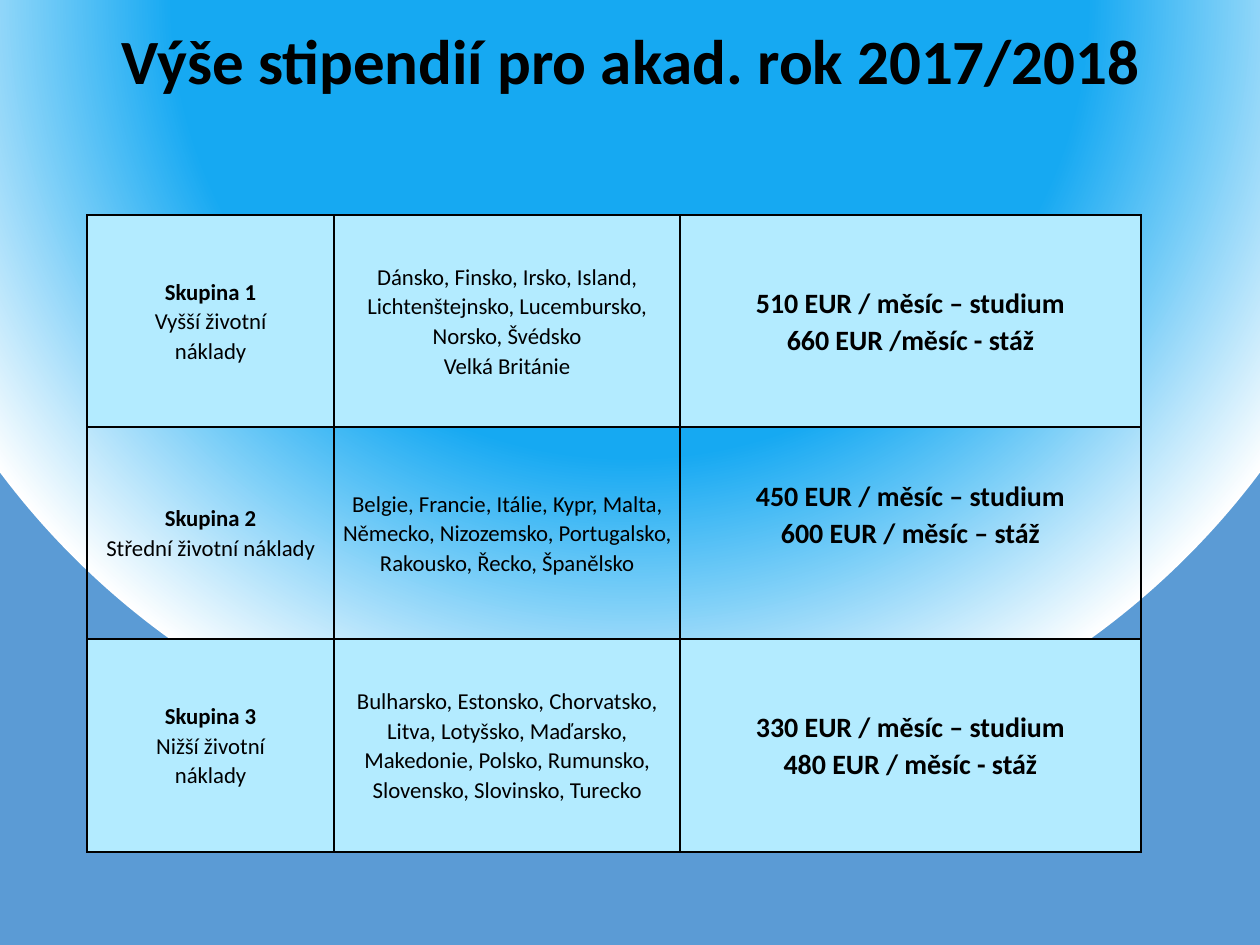
from dataclasses import dataclass

from pptx import Presentation
from pptx.dml.color import RGBColor
from pptx.enum.text import MSO_ANCHOR, MSO_AUTO_SIZE, PP_ALIGN
from pptx.oxml import parse_xml
from pptx.oxml.ns import nsdecls, qn
from pptx.util import Pt

EMU_PER_PX = 914400 / 126
CENTER = PP_ALIGN.CENTER
TOP, MIDDLE = MSO_ANCHOR.TOP, MSO_ANCHOR.MIDDLE
NO_AUTOFIT = MSO_AUTO_SIZE.NONE
TITLE_ONLY = 5


@dataclass(frozen=True)
class Theme:
    font: str = "Calibri"
    ink: str = "000000"
    band: str = "B3EBFF"
    sky: str = "16A9F2"
    glow: str = "FFFFFF"
    edge: str = "5B9BD5"
    title_pt: int = 36
    body_pt: int = 13
    amount_pt: int = 16
    border_pt: int = 1


@dataclass(frozen=True)
class Group:
    name: str
    costs: list[str]
    countries: list[str]
    amounts: list[str]
    shaded: bool = True
    amount_bottom: int = 0


THEME = Theme()
COLS = [247, 346, 461]
ROWS = [212, 212, 213]
CELL_MARGIN = 9
GROUPS = [
    Group("Skupina 1", ["Vyšší životní", "náklady"],
          ["Dánsko, Finsko, Irsko, Island, Lichtenštejnsko, Lucembursko, "
           "Norsko, Švédsko", "Velká Británie"],
          ["510 EUR / měsíc – studium", "660 EUR /měsíc - stáž"]),
    Group("Skupina 2", ["Střední životní náklady"],
          ["Belgie, Francie, Itálie, Kypr, Malta, Německo, Nizozemsko, "
           "Portugalsko, Rakousko, Řecko, Španělsko"],
          ["450 EUR / měsíc – studium", "600 EUR / měsíc – stáž"],
          shaded=False, amount_bottom=37),
    Group("Skupina 3", ["Nižší životní", "náklady"],
          ["Bulharsko, Estonsko, Chorvatsko, Litva, Lotyšsko, Maďarsko, "
           "Makedonie, Polsko, Rumunsko, Slovensko, Slovinsko, Turecko"],
          ["330 EUR / měsíc – studium", "480 EUR / měsíc - stáž"]),
]


def px(n: int) -> int:
    return round(n * EMU_PER_PX)


def write(tf, lines: list[str], *, size: int, bold_lines: int = 0,
          spacing: float = 1.07, before: float = 0) -> None:
    """Fill a text frame with centred lines, the first bold_lines in bold."""
    for i, line in enumerate(lines):
        p = tf.paragraphs[0] if i == 0 else tf.add_paragraph()
        p.alignment = CENTER
        p.line_spacing = spacing
        p.space_before = Pt(before)
        r = p.add_run()
        r.text = line
        r.font.name = THEME.font
        r.font.size = Pt(size)
        r.font.bold = i < bold_lines
        r.font.color.rgb = RGBColor.from_string(THEME.ink)


def set_background(slide) -> None:
    stops = [(58, THEME.sky), (100, THEME.glow), (100, THEME.edge)]
    gs = "".join(f'<a:gs pos="{pos * 1000}"><a:srgbClr val="{color}"/></a:gs>'
                 for pos, color in stops)
    slide.background.fill.solid()
    solid = slide.element.find(".//" + qn("a:solidFill"))
    solid.getparent().replace(solid, parse_xml(
        f'<a:gradFill {nsdecls("a")} rotWithShape="1"><a:gsLst>{gs}</a:gsLst>'
        '<a:path path="circle"><a:fillToRect l="50000" t="-80000" r="50000" '
        'b="180000"/></a:path></a:gradFill>'))


def add_title(slide, text: str) -> None:
    sp = slide.shapes.title
    sp.left, sp.top, sp.width, sp.height = px(33), px(30), px(1196), px(911)
    tf = sp.text_frame
    tf.word_wrap = True
    tf.auto_size = NO_AUTOFIT
    tf.vertical_anchor = TOP
    write(tf, [text], size=THEME.title_pt, bold_lines=1, spacing=0.8, before=7.5)


def format_cell(cell, shaded: bool, bottom: int = 0) -> None:
    cell.vertical_anchor = MIDDLE
    cell.margin_left = cell.margin_right = px(CELL_MARGIN)
    cell.margin_top, cell.margin_bottom = 0, px(bottom)
    tc_pr = cell._tc.get_or_add_tcPr()
    for side in ("lnL", "lnR", "lnT", "lnB"):
        tc_pr.append(parse_xml(
            f'<a:{side} {nsdecls("a")} w="{Pt(THEME.border_pt)}"><a:solidFill>'
            f'<a:srgbClr val="{THEME.ink}"/></a:solidFill></a:{side}>'))
    if shaded:
        cell.fill.solid()
        cell.fill.fore_color.rgb = RGBColor.from_string(THEME.band)
    else:
        cell.fill.background()


def add_grants(slide, groups: list[Group]) -> None:
    table = slide.shapes.add_table(len(groups), len(COLS), px(87), px(215),
                                   px(sum(COLS)), px(sum(ROWS))).table
    table.first_row = table.horz_banding = False
    for col, width in zip(table.columns, COLS):
        col.width = px(width)
    for row, height, g in zip(table.rows, ROWS, groups):
        row.height = px(height)
        name, countries, amounts = row.cells
        format_cell(name, g.shaded)
        format_cell(countries, g.shaded)
        format_cell(amounts, g.shaded, g.amount_bottom)
        write(name.text_frame, [g.name, *g.costs], size=THEME.body_pt, bold_lines=1)
        write(countries.text_frame, g.countries, size=THEME.body_pt)
        write(amounts.text_frame, g.amounts, size=THEME.amount_pt,
              bold_lines=len(g.amounts))


def main() -> None:
    prs = Presentation()
    prs.slide_width, prs.slide_height = px(1260), px(945)
    slide = prs.slides.add_slide(prs.slide_layouts[TITLE_ONLY])

    # Background and heading
    set_background(slide)
    add_title(slide, "Výše stipendií pro akad. rok 2017/2018")

    # Grant amounts by country group
    add_grants(slide, GROUPS)
    prs.save("out.pptx")


if __name__ == "__main__":
    main()
